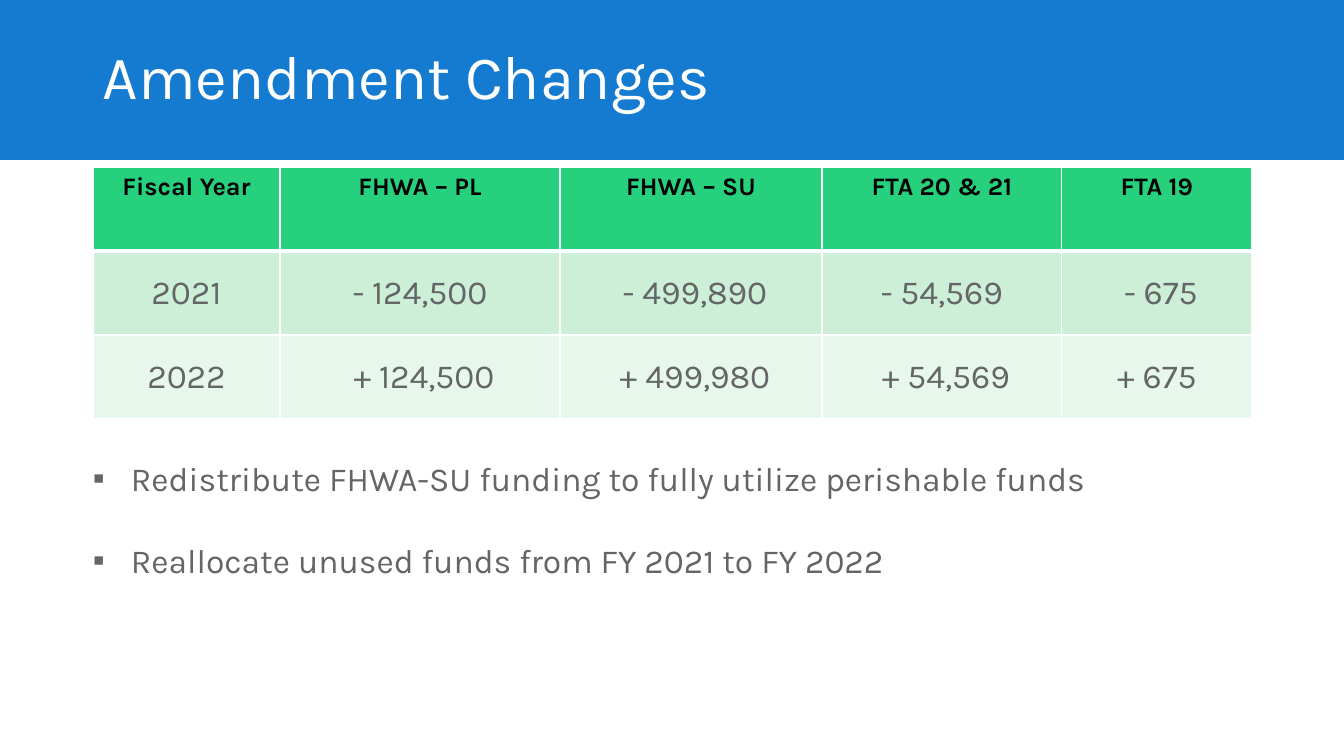
from itertools import product

from lxml import etree
from pptx import Presentation, util as u
from pptx.dml.color import RGBColor
from pptx.enum import shapes, text
from pptx.oxml.ns import qn

PX = 914400 / 100.8
THEME = {
    "font": "Karla", "title_size": 44, "header_size": 18, "body_size": 24,
    "white": "FFFFFF", "black": "000000", "gray": "646566", "blue": "147BD1",
    "green": "26D07C", "bands": ("CDEED7", "E8F7EC"),
}


def px(length):
    return u.Emu(round(length * PX))


def write(para, words, size, color, bold=False):
    span = para.add_run()
    span.text = words
    for name, value in {"name": THEME["font"], "size": u.Pt(THEME[size]), "bold": bold}.items():
        setattr(span.font, name, value)
    span.font.color.rgb = RGBColor.from_string(THEME[color])


deck = Presentation()
deck.slide_width, deck.slide_height = px(1344), px(756)
page = deck.slides.add_slide(deck.slide_layouts[6])

# Title band
band = page.shapes.add_shape(shapes.MSO_SHAPE.RECTANGLE, 0, 0, px(1344), px(160))
band.shadow.inherit = False
band.fill.solid()
band.fill.fore_color.rgb = RGBColor.from_string(THEME["blue"])
band.line.fill.background()

title = page.shapes.add_textbox(px(93), px(26), px(998), px(108)).text_frame
title.word_wrap = True
title.vertical_anchor = text.MSO_ANCHOR.MIDDLE
title.paragraphs[0].line_spacing = 0.9
write(title.paragraphs[0], "Amendment Changes", "title_size", "white")

# Funding table
rows = [
    ("Fiscal Year", "FHWA – PL", "FHWA – SU", "FTA 20 & 21", "FTA 19"),
    ("2021", "- 124,500", "- 499,890", "- 54,569", "- 675"),
    ("2022", "+ 124,500", "+ 499,980", "+ 54,569", "+ 675"),
]
column_widths = (187, 280, 262, 240, 190)
row_height = 84
nudged_cells = {(1, 2), (1, 4), (2, 1), (2, 2), (2, 3)}

table = page.shapes.add_table(
    len(rows), len(column_widths), px(93), px(167),
    px(sum(column_widths)), px(row_height * len(rows))).table
for column, width in zip(table.columns, column_widths):
    column.width = px(width)
for row in table.rows:
    row.height = px(row_height)

for r, c in product(range(len(rows)), range(len(column_widths))):
    cell = table.cell(r, c)
    para = cell.text_frame.paragraphs[0]
    para.alignment = text.PP_ALIGN.CENTER
    if r == 0:
        write(para, rows[r][c], "header_size", "black", bold=True)
    else:
        write(para, rows[r][c], "body_size", "gray")
        cell.vertical_anchor = text.MSO_ANCHOR.MIDDLE
    if r and c:
        left = 9 if (r, c) in nudged_cells else 1
        margins = {"left": left, "top": 1, "right": 1, "bottom": 0}
        for side, margin in margins.items():
            setattr(cell, f"margin_{side}", px(margin))

    # White borders, heavier under the header; they precede the fill in the XML
    properties = cell._tc.get_or_add_tcPr()
    for side in "LRTB":
        heavy = (r, side) in ((0, "B"), (1, "T"))
        border = etree.SubElement(properties, qn(f"a:ln{side}"), w=str(u.Pt(3 if heavy else 1)))
        paint = etree.SubElement(border, qn("a:solidFill"))
        etree.SubElement(paint, qn("a:srgbClr"), val=THEME["white"])
    cell.fill.solid()
    cell.fill.fore_color.rgb = RGBColor.from_string(
        THEME["bands"][r - 1] if r else THEME["green"])

# Bulleted reasons
reasons = page.shapes.add_textbox(px(83), px(453), px(1240), px(132)).text_frame
reasons.word_wrap = True
for i, words in enumerate((
        "Redistribute FHWA-SU funding to fully utilize perishable funds",
        "Reallocate unused funds from FY 2021 to FY 2022")):
    para = reasons.add_paragraph() if i else reasons.paragraphs[0]
    layout = para._p.get_or_add_pPr()
    layout.set("marL", str(px(38)))
    layout.set("indent", str(px(-38)))
    etree.SubElement(layout, qn("a:buFont"), typeface="Arial")
    etree.SubElement(layout, qn("a:buChar"), char="▪")
    if i:
        para.space_before = u.Pt(30)
    write(para, words, "body_size", "gray")

deck.save("out.pptx")
